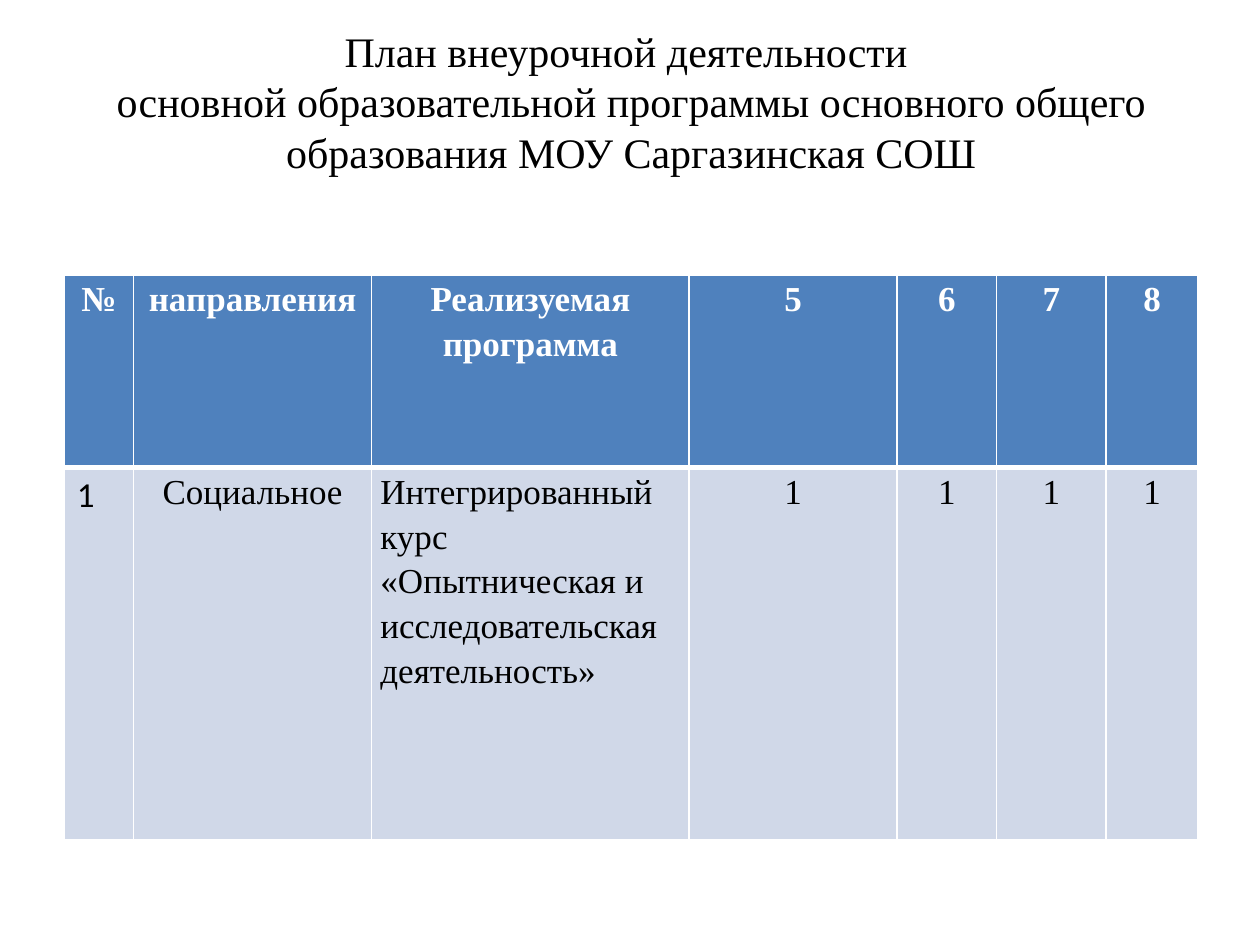
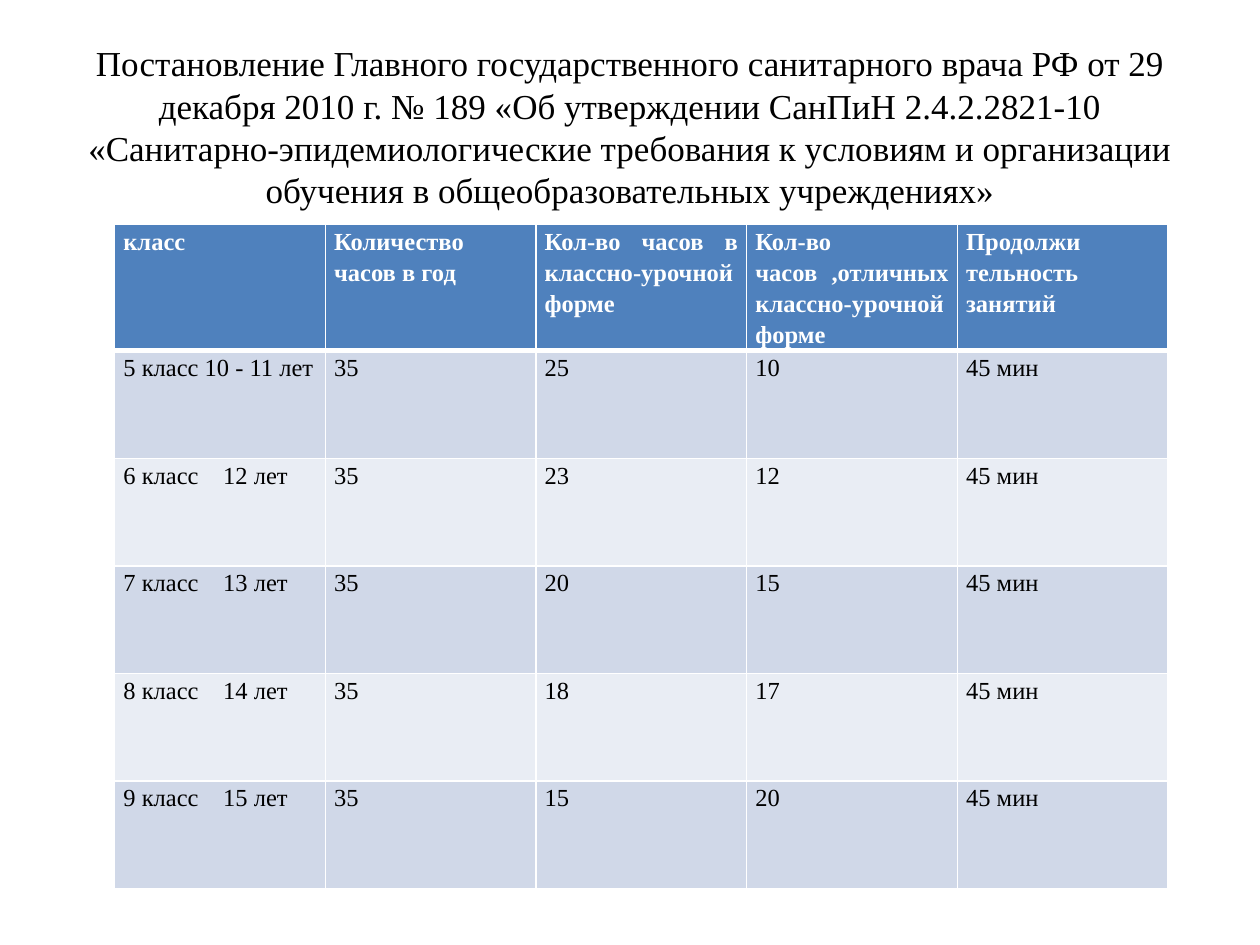
from dataclasses import dataclass

from lxml import etree
from pptx import Presentation
from pptx.dml.color import RGBColor
from pptx.enum.text import MSO_ANCHOR, MSO_AUTO_SIZE, PP_ALIGN
from pptx.oxml.ns import qn
from pptx.util import Pt

LEFT, CENTER, JUSTIFY = PP_ALIGN.LEFT, PP_ALIGN.CENTER, PP_ALIGN.JUSTIFY
MIDDLE = MSO_ANCHOR.MIDDLE
NO_AUTOFIT = MSO_AUTO_SIZE.NONE
TITLE_ONLY = 5


@dataclass(frozen=True)
class Theme:
    serif: str = "Times New Roman"
    sans: str = "Calibri"
    ink: str = "000000"
    paper: str = "FFFFFF"
    header: str = "4F81BD"
    bands: tuple = ("D0D8E8", "E9EDF4")
    large_title: int = 24
    title: int = 20
    large_cell: int = 20
    cell: int = 14
    thin: int = 1
    thick: int = 3
    line_spacing: float = 1.15


def apply(target, formats):
    for name, value in formats.items():
        setattr(target, name, value)


class SlideBuilder:
    def __init__(self, deck, theme):
        self.deck = deck
        self.theme = theme
        self.page = None

    def new_page(self):
        layout = self.deck.slide_layouts[TITLE_ONLY]
        self.page = self.deck.slides.add_slide(layout)

    def style_font(self, font, size, color, bold=False, name=None):
        apply(font, {"name": name or self.theme.serif, "size": Pt(size), "bold": bold})
        font.color.rgb = RGBColor.from_string(color)

    def title(self, text, left, top, width, height, size, bottom_inset=3.6):
        box = self.page.shapes.title
        apply(box, {"left": Pt(left), "top": Pt(top),
                    "width": Pt(width), "height": Pt(height)})
        frame = box.text_frame
        frame.text = text
        apply(frame, {"word_wrap": True, "auto_size": NO_AUTOFIT,
                      "vertical_anchor": MIDDLE, "margin_bottom": Pt(bottom_inset)})
        for para in frame.paragraphs:
            para.alignment = CENTER
            for span in para.runs:
                self.style_font(span.font, size, self.theme.ink)

    def borders(self, cell, row):
        properties = cell._tc.get_or_add_tcPr()
        top = self.theme.thick if row == 1 else self.theme.thin
        bottom = self.theme.thick if row == 0 else self.theme.thin
        widths = {"a:lnL": self.theme.thin, "a:lnR": self.theme.thin,
                  "a:lnT": top, "a:lnB": bottom}
        for tag, width in widths.items():
            line = etree.SubElement(properties, qn(tag), w=str(Pt(width)))
            fill = etree.SubElement(line, qn("a:solidFill"))
            etree.SubElement(fill, qn("a:srgbClr"), val=self.theme.paper)

    def tab_stop(self, para, position):
        stops = etree.SubElement(para._p.get_or_add_pPr(), qn("a:tabLst"))
        etree.SubElement(stops, qn("a:tab"), pos=str(Pt(position)), algn="l")

    def cell(self, cell, text, row, size, alignment, tab=None):
        is_header = row == 0
        self.borders(cell, row)
        cell.fill.solid()
        fill = self.theme.header if is_header else self.theme.bands[(row - 1) % 2]
        cell.fill.fore_color.rgb = RGBColor.from_string(fill)
        apply(cell, {"margin_left": Pt(5), "margin_right": Pt(5),
                     "margin_top": 0, "margin_bottom": 0})
        cell.text_frame.text = text
        color = self.theme.paper if is_header else self.theme.ink
        for para in cell.text_frame.paragraphs:
            apply(para, {"alignment": alignment,
                         "line_spacing": self.theme.line_spacing})
            if "\t" in text:
                self.tab_stop(para, tab)
            for span in para.runs:
                self.style_font(span.font, size, color, bold=is_header)

    def table(self, rows, left, top, widths, heights, size, align, tab=None):
        frame = self.page.shapes.add_table(
            len(rows), len(widths), Pt(left), Pt(top),
            Pt(sum(widths)), Pt(sum(heights)))
        table = frame.table
        for column, width in zip(table.columns, widths):
            column.width = Pt(width)
        for line, height in zip(table.rows, heights):
            line.height = Pt(height)
        for row, texts in enumerate(rows):
            for column, text in enumerate(texts):
                self.cell(table.cell(row, column), text, row, size,
                          align(row, column), tab)
        return table

    def plain_number(self, cell, size):
        apply(cell, {"margin_left": Pt(7.2), "margin_right": Pt(7.2),
                     "margin_top": Pt(3.6), "margin_bottom": Pt(3.6)})
        para = cell.text_frame.paragraphs[0]
        apply(para, {"alignment": LEFT, "line_spacing": 1.0})
        self.style_font(para.runs[0].font, size, self.theme.ink, name=self.theme.sans)


def activity_plan(builder):
    theme = builder.theme
    builder.new_page()
    builder.title(
        "План внеурочной деятельности \vосновной образовательной программы "
        "основного общего образования МОУ Саргазинская СОШ",
        36.7, 15.1, 648, 111.6, theme.large_title, bottom_inset=30)
    rows = [
        ["№", "направления", "Реализуемая программа", "5", "6", "7", "8"],
        ["1", "Социальное",
         "Интегрированный курс\n«Опытническая и исследовательская деятельность»",
         "1", "1", "1", "1"],
    ]
    table = builder.table(
        rows, 36.7, 157, [39.6, 136.1, 181.4, 118.8, 56.9, 62.6, 52.6],
        [110.2, 212.4], theme.large_cell,
        lambda row, column: LEFT if (row, column) == (1, 2) else CENTER)
    builder.plain_number(table.cell(1, 0), theme.large_cell)


def lesson_hours(builder):
    theme = builder.theme
    builder.new_page()
    builder.title(
        "Постановление Главного государственного санитарного врача РФ "
        "от 29 декабря 2010 г. № 189 «Об утверждении СанПиН 2.4.2.2821-10 "
        "«Санитарно-эпидемиологические требования к условиям и организации "
        "обучения в общеобразовательных учреждениях»",
        36, 21.6, 648, 100.8, theme.title)
    year_hours = 35
    classes = [
        ("5 класс 10 - 11 лет", 25),
        ("6 класс\t12 лет", 23),
        ("7 класс\t13 лет", 20),
        ("8 класс\t14 лет", 18),
        ("9 класс\t15 лет", 15),
    ]
    rows = [["класс", "Количество часов в год",
             "Кол-во часов в классно-урочной форме",
             "Кол-во часов ,отличных классно-урочной форме",
             "Продолжи\nтельность занятий"]]
    rows += [[name, str(year_hours), str(hours), str(year_hours - hours), "45 мин"]
             for name, hours in classes]
    builder.table(rows, 65.5, 128.2, [120.4] * 5, [72.2] + [61.5] * len(classes),
                  theme.cell, lambda row, column: JUSTIFY, tab=57)


def main():
    deck = Presentation()
    apply(deck, {"slide_width": Pt(720), "slide_height": Pt(540)})
    builder = SlideBuilder(deck, Theme())
    activity_plan(builder)
    lesson_hours(builder)
    deck.save("out.pptx")


if __name__ == "__main__":
    main()
